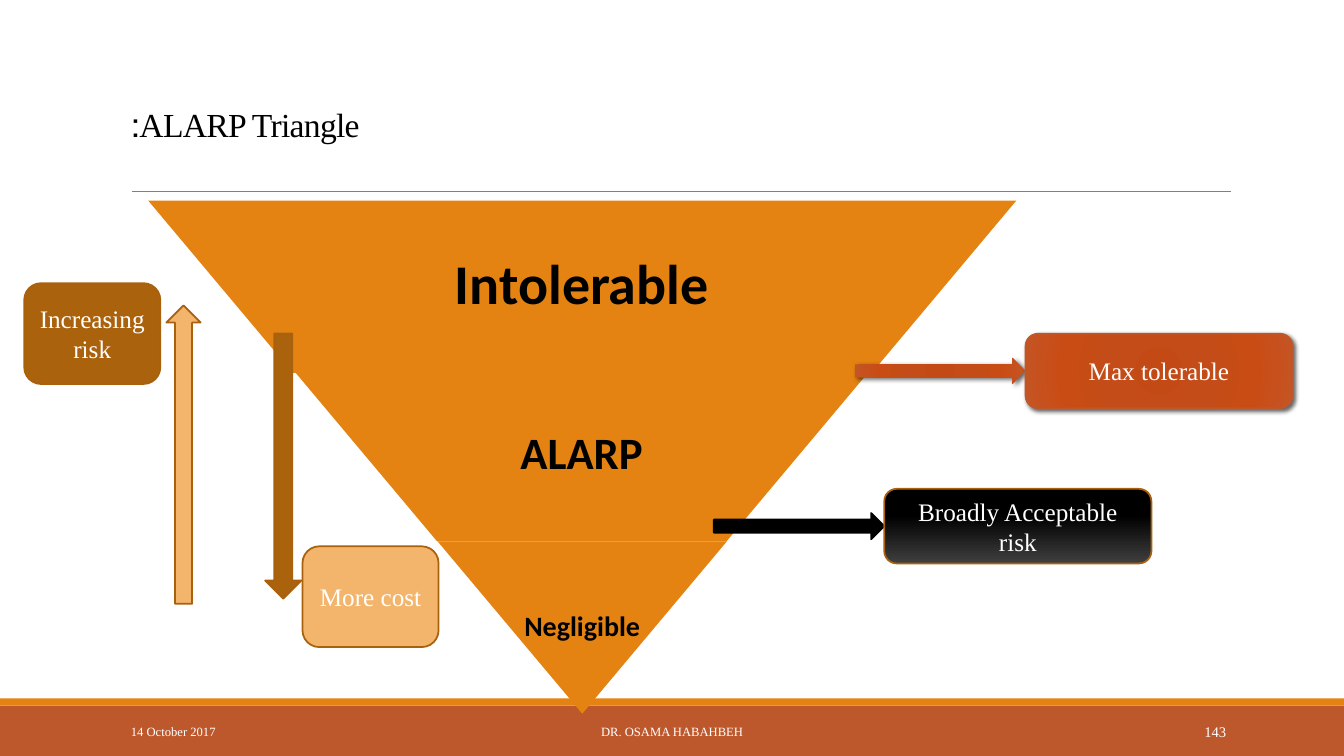
from dataclasses import dataclass

from pptx import Presentation
from pptx.dml.color import RGBColor
from pptx.enum.shapes import MSO_CONNECTOR, MSO_SHAPE
from pptx.enum.text import MSO_ANCHOR, PP_ALIGN
from pptx.oxml import parse_xml
from pptx.oxml.ns import nsdecls, qn
from pptx.util import Pt

PX = 9144  # EMU per px, 100 px to the inch


@dataclass(frozen=True)
class Theme:
    serif: str = "Times New Roman"
    sans: str = "Calibri"
    orange: str = "E48312"
    rust: str = "BD582C"
    brown: str = "AB620D"
    edge: str = "A9610D"
    sand: str = "F3B56C"
    black: str = "000000"
    white: str = "FFFFFF"
    gray: str = "808080"
    title: float = 24
    label: float = 18
    foot: float = 9
    page: float = 10.5
    levels: tuple = (40, 32, 20)
    ember: tuple = ((0, "C44A15"), (34, "C34C18"), (70, "C94C15"), (100, "C45525"))
    night: tuple = ((0, "3F3F3F"), (65, "000000"), (100, "000000"))
    glow: str = ('<a:path path="circle"><a:fillToRect l="100000" t="100000" '
                 'r="100000" b="100000"/></a:path>')
    rise: str = '<a:lin ang="16200000" scaled="0"/>'


class Board:
    def __init__(self, slide, theme):
        self.slide, self.theme = slide, theme

    def place(self, item, box):
        for name, value in zip(("left", "top", "width", "height"), box):
            setattr(item, name, value * PX)

    def letter(self, item, text, size, color, font=None, bold=False,
               align=PP_ALIGN.CENTER, gap=None, inset=None):
        frame = item.text_frame
        frame.word_wrap = True
        frame.vertical_anchor = MSO_ANCHOR.MIDDLE
        if inset is not None:
            for side in ("left", "top", "right", "bottom"):
                setattr(frame, f"margin_{side}", inset * PX)
        frame.text = text
        form = {"name": font or self.theme.serif, "size": Pt(size), "bold": bold}
        for para in frame.paragraphs:
            para.alignment = align
            para.line_spacing = gap
            for run in para.runs:
                for name, value in form.items():
                    setattr(run.font, name, value)
                run.font.color.rgb = RGBColor.from_string(color)

    def title(self, text, box, lift):
        item = self.slide.shapes.title
        self.place(item, box)
        self.letter(item, text, self.theme.title, self.theme.black,
                    align=PP_ALIGN.LEFT, gap=0.85)
        frame = item.text_frame
        frame.vertical_anchor = MSO_ANCHOR.BOTTOM
        frame.margin_bottom = lift * PX
        para = frame.paragraphs[0]
        para.runs[0]._r.get_or_add_rPr().set("spc", "-50")
        para._p.get_or_add_pPr().set("rtl", "1")

    def text(self, text, box, size, color, **form):
        item = self.slide.shapes.add_textbox(*(v * PX for v in box))
        self.letter(item, text, size, color, **form)

    def shape(self, kind, box, fill, line=None, width=1.25, text=None, turn=0, slant=None):
        item = self.slide.shapes.add_shape(kind, *(v * PX for v in box))
        item.shadow.inherit = False
        item.rotation = turn
        if slant is not None:
            item.adjustments[0] = slant
        item.fill.solid()
        item.fill.fore_color.rgb = RGBColor.from_string(fill)
        if line:
            item.line.color.rgb = RGBColor.from_string(line)
            item.line.width = Pt(width)
        else:
            item.line.fill.background()
        if text:
            self.letter(item, text, self.theme.label, self.theme.white)
        return item

    def blend(self, item, stops, course):
        marks = "".join(f'<a:gs pos="{at * 1000}"><a:srgbClr val="{color}"/></a:gs>'
                        for at, color in stops)
        props = item.element.spPr
        props.replace(props.find(qn("a:solidFill")), parse_xml(
            f'<a:gradFill {nsdecls("a")} rotWithShape="1"><a:gsLst>{marks}</a:gsLst>'
            f'{course}</a:gradFill>'))

    def shade(self, item, blur):
        item.element.spPr.find(qn("a:effectLst")).append(parse_xml(
            f'<a:outerShdw {nsdecls("a")} blurRad="{Pt(blur)}" dist="{Pt(2)}" dir="2700000" '
            f'rotWithShape="0"><a:srgbClr val="{self.theme.black}">'
            '<a:alpha val="60000"/></a:srgbClr></a:outerShdw>'))

    def rule(self, left, right, top):
        line = self.slide.shapes.add_connector(
            MSO_CONNECTOR.STRAIGHT, left * PX, top * PX, right * PX, top * PX)
        line.line.color.rgb = RGBColor.from_string(self.theme.gray)
        line.line.width = Pt(0.5)
        line.element.spPr.append(parse_xml(f'<a:effectLst {nsdecls("a")}/>'))


def main():
    deck = Presentation()
    deck.slide_width, deck.slide_height = 1333 * PX, 750 * PX
    look = Theme()
    board = Board(deck.slides.add_slide(deck.slide_layouts[5]), look)

    # Footer bars, title and rule
    board.shape(MSO_SHAPE.RECTANGLE, (0, 700, 1333, 50), look.rust)
    board.shape(MSO_SHAPE.RECTANGLE, (0, 693, 1333, 7), look.orange)
    board.rule(131, 1221, 190)
    board.title("ALARP Triangle:", (120, 31, 1100, 159), 47)

    # Triangle: each level is one step narrower
    middle, step, high = 577, 287, 171
    levels = (("Intolerable", 199, 560, 6), ("ALARP", 366, 374, 4), ("Negligible", 537, 287, 3))
    for rank, (name, top, room, inset) in enumerate(levels):
        wide = step * (3 - rank)
        board.shape(MSO_SHAPE.TRAPEZOID, (middle - wide // 2, top, wide, high),
                    look.orange, turn=180, slant=0.839)
        board.text(name, (middle - room // 2, top, room, high), look.levels[rank],
                   look.black, font=look.sans, bold=True, gap=0.9, inset=inset)

    # Limits on the right: an arrow leading to a label
    limits = (
        ("Max tolerable", 1017, 331, look.ember, look.glow, None, look.rust, 1),
        ("Broadly Acceptable\nrisk", 877, 485, None, None, look.black, look.edge, 1.25))
    for text, left, top, stops, course, line, edge, width in limits:
        arrow = board.shape(MSO_SHAPE.RIGHT_ARROW, (left - 169, top + 24, 169, 26),
                            look.black, line)
        label = board.shape(MSO_SHAPE.ROUNDED_RECTANGLE, (left, top, 265, 74),
                            look.black, edge, width, text)
        board.blend(label, stops or look.night, course or look.rise)
        if stops:
            board.blend(arrow, stops, course)
            board.shade(arrow, 3.5)
            board.shade(label, 3)

    # Cost and risk on the left
    for box, fill, turn in (((263, 331, 36, 263), look.brown, 0),
                            ((165, 303, 34, 296), look.sand, 180)):
        board.shape(MSO_SHAPE.DOWN_ARROW, box, fill, look.edge, turn=turn)
    for text, left, top, fill in (("More cost", 300, 542, look.sand),
                                  ("Increasing\nrisk", 24, 281, look.brown)):
        board.shape(MSO_SHAPE.ROUNDED_RECTANGLE, (left, top, 135, 100), fill,
                    look.edge, text=text)

    # Footer
    for text, left, wide, size, align in (
            ("14 October 2017", 120, 270, look.foot, PP_ALIGN.LEFT),
            ("DR. OSAMA HABAHBEH", 403, 527, look.foot, PP_ALIGN.CENTER),
            ("143", 1083, 143, look.page, PP_ALIGN.RIGHT)):
        board.text(text, (left, 706, wide, 40), size, look.white, align=align)

    deck.save("out.pptx")


if __name__ == "__main__":
    main()
